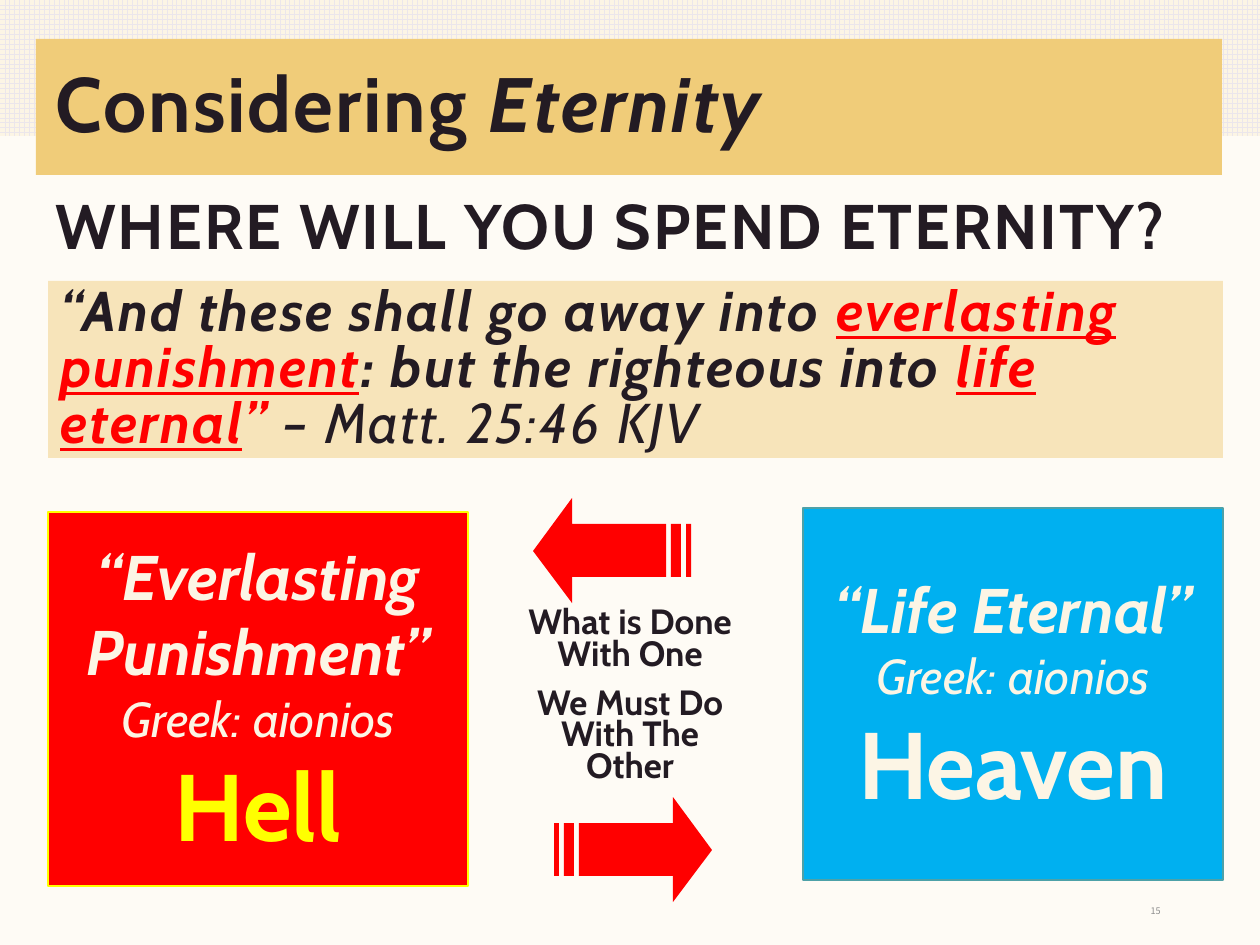
from dataclasses import dataclass

from pptx import Presentation
from pptx.dml.color import RGBColor
from pptx.enum.dml import MSO_PATTERN
from pptx.enum.shapes import MSO_SHAPE
from pptx.enum.text import MSO_ANCHOR, MSO_AUTO_SIZE, PP_ALIGN
from pptx.util import Pt


@dataclass(frozen=True)
class Theme:
    """Colours, fonts and type sizes of the slide."""
    paper: str = "FEFBF5"
    cream: str = "FCF5E5"
    grid: str = "EBE6EB"
    gold: str = "F0CC79"
    sand: str = "F7E4BA"
    ink: str = "231B23"
    red: str = "FF0000"
    yellow: str = "FFFF00"
    blue: str = "00B0F0"
    teal: str = "4DA1A8"
    grey: str = "8D8D8D"
    font: str = "Cabin"
    number_font: str = "Noto Sans CJK JP"
    title: float = 44
    heading: float = 36
    verse: float = 32
    greek: float = 28
    place: float = 54
    note: float = 20
    number: float = 5.2


T = Theme()
SCALE = 914400 / 126
ARROW_W = 158
ARROW = [
    [(39, 0), (39, 26), (133, 26), (133, 79), (39, 79), (39, 105), (0, 53)],
    [(138, 26), (138, 79), (148, 79), (148, 26)],
    [(153, 26), (153, 79), (158, 79), (158, 26)],
]


def px(*values):
    """Turn px lengths into EMU."""
    return [round(v * SCALE) for v in values]


def rgb(code):
    """Return the colour of a hex code."""
    return RGBColor.from_string(code)


def apply(obj, formats):
    """Set each format value on an object."""
    for name, value in formats.items():
        setattr(obj, name, value)


def add_run(p, text, color=T.ink, spc=0, **formats):
    """Add one formatted run to a paragraph."""
    r = p.add_run()
    r.text = text
    apply(r.font, {"name": T.font, "bold": True, **formats})
    r.font.color.rgb = rgb(color)
    if spc:
        r.font._element.set("spc", str(spc))


def write(tf, paragraphs, frame=None, **formats):
    """Fill a text frame with paragraphs, each a list of (text, format) runs."""
    apply(tf, {"word_wrap": True, "auto_size": MSO_AUTO_SIZE.NONE, **(frame or {})})
    for i, runs in enumerate(paragraphs):
        p = tf.add_paragraph() if i else tf.paragraphs[0]
        apply(p, formats)
        for text, run_formats in runs:
            add_run(p, text, **run_formats)


def add_rect(s, box, fill=None, line=None):
    """Add a flat rectangle."""
    sp = s.shapes.add_shape(MSO_SHAPE.RECTANGLE, *px(*box))
    sp.shadow.inherit = False
    if fill:
        sp.fill.solid()
        sp.fill.fore_color.rgb = rgb(fill)
    if line:
        sp.line.color.rgb = rgb(line)
        sp.line.width = Pt(0.75)
    else:
        sp.line.fill.background()
    return sp


def add_title(s, box):
    """Place the title on its gold band over the grid strip."""
    x, y, w, h = box
    strip = add_rect(s, (0, 0, 1260, 136))
    strip.fill.patterned()
    strip.fill.pattern = MSO_PATTERN.LARGE_GRID
    strip.fill.fore_color.rgb = rgb(T.grid)
    strip.fill.back_color.rgb = rgb(T.cream)
    add_rect(s, box, T.gold)
    sp = s.shapes.title
    apply(sp, dict(zip(("left", "top", "width", "height"), px(x + 7, y + 28, w - 7, 81))))
    s.shapes._spTree.append(sp._element)
    style = {"size": Pt(T.title), "spc": 110}
    write(sp.text_frame, [[("Considering", style), (" Eternity", {**style, "italic": True})]],
          {"vertical_anchor": MSO_ANCHOR.MIDDLE}, alignment=PP_ALIGN.LEFT, line_spacing=0.9)


def add_heading(s, box):
    """Place the question under the title."""
    sp = s.shapes.add_textbox(*px(*box))
    write(sp.text_frame, [[("WHERE WILL YOU SPEND ETERNITY?", {"size": Pt(T.heading), "spc": 110})]],
          line_spacing=Pt(32), space_before=Pt(12))


def add_verse(s, box):
    """Place the quoted verse on its sand panel."""
    base = {"size": Pt(T.verse), "italic": True, "spc": 110}
    red = {**base, "color": T.red}
    key = {**red, "underline": True}
    runs = [("“And these shall go away into ", base), ("everlasting", key), (" ", red),
            ("punishment", key), (": but the righteous into ", base), ("life", key), (" ", red),
            ("eternal", key), ("” ", red), ("– Matt. 25:46 KJV", {**base, "bold": False})]
    write(add_rect(s, box, T.sand).text_frame, [runs], {"vertical_anchor": MSO_ANCHOR.TOP},
          alignment=PP_ALIGN.LEFT, line_spacing=Pt(32), space_before=Pt(11.2))


def add_card(s, box, fill, line, quote, place, place_color):
    """Place a destination card with its quote, Greek word and place."""
    style = {"color": T.cream, "italic": True}
    paragraphs = [[(text, {**style, "size": Pt(T.heading)})] for text in quote]
    paragraphs.append([("Greek: aionios", {**style, "size": Pt(T.greek), "bold": False})])
    paragraphs.append([(place, {"color": place_color, "size": Pt(T.place)})])
    write(add_rect(s, box, fill, line).text_frame, paragraphs,
          {"word_wrap": False, "vertical_anchor": MSO_ANCHOR.MIDDLE}, alignment=PP_ALIGN.CENTER)


def add_arrow(s, x, y, to_right=False):
    """Draw a striped arrow with its top left corner at x, y."""
    contours = [[(x + (ARROW_W - dx if to_right else dx), y + dy) for dx, dy in contour]
                for contour in ARROW]
    fb = s.shapes.build_freeform(*contours[0][0], scale=SCALE)
    for i, (start, *rest) in enumerate(contours):
        if i:
            fb.move_to(*start)
        fb.add_line_segments(rest, close=True)
    sp = fb.convert_to_shape()
    sp.shadow.inherit = False
    sp.fill.solid()
    sp.fill.fore_color.rgb = rgb(T.red)
    sp.line.fill.background()


def add_comparison(s, box):
    """Place the note between the two arrows."""
    x, y, w, h = box
    add_arrow(s, x + 25, y)
    add_arrow(s, x + 46, y + 299, to_right=True)
    sp = s.shapes.add_textbox(*px(x, y + 106, w, 194))
    notes = ("What is Done With One", "We Must Do With The Other")
    write(sp.text_frame, [[(text, {"size": Pt(T.note)})] for text in notes],
          alignment=PP_ALIGN.CENTER, line_spacing=Pt(18), space_before=Pt(10))


def add_number(s, box):
    """Place the slide number."""
    style = {"size": Pt(T.number), "name": T.number_font, "color": T.grey, "bold": False}
    write(s.shapes.add_textbox(*px(*box)).text_frame, [[("15", style)]],
          {"vertical_anchor": MSO_ANCHOR.MIDDLE}, alignment=PP_ALIGN.RIGHT)


def main():
    """Build the slide and save it."""
    prs = Presentation()
    prs.slide_width, prs.slide_height = px(1260, 945)
    s = prs.slides.add_slide(prs.slide_layouts[5])
    s.background.fill.solid()
    s.background.fill.fore_color.rgb = rgb(T.paper)
    add_title(s, (36, 39, 1186, 136))
    add_heading(s, (43, 200, 1169, 68))
    add_verse(s, (48, 281, 1175, 177))
    add_card(s, (48, 512, 420, 374), T.red, T.yellow, ("“Everlasting", "Punishment”"), "Hell", T.yellow)
    add_card(s, (803, 508, 420, 372), T.blue, T.teal, ("“Life Eternal”",), "Heaven", T.cream)
    add_comparison(s, (508, 498, 244, 404))
    add_number(s, (890, 895, 283, 31))
    prs.save("out.pptx")


if __name__ == "__main__":
    main()
